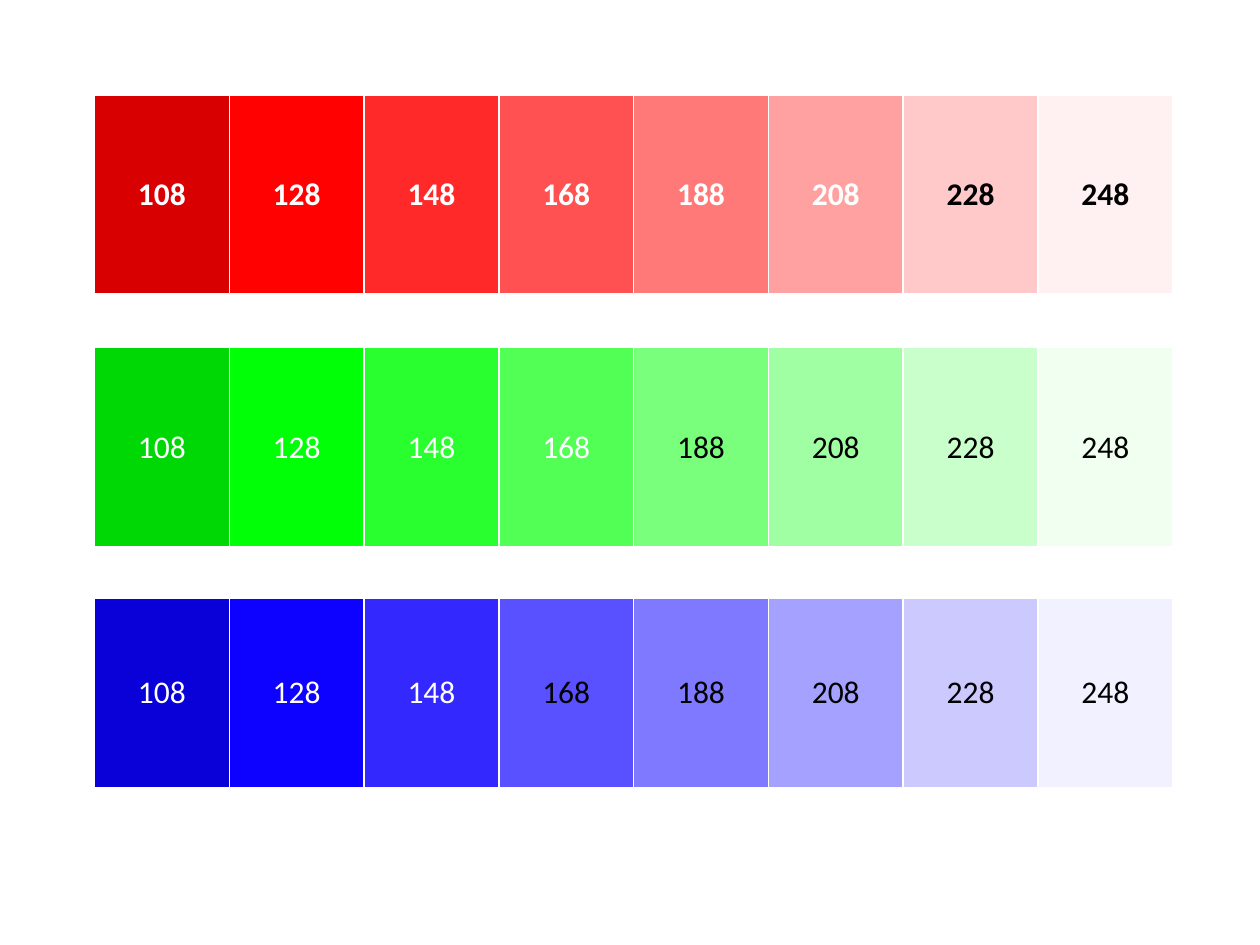
from lxml.etree import SubElement
from pptx import Presentation
from pptx.dml.color import RGBColor
from pptx.enum.text import MSO_ANCHOR, PP_ALIGN
from pptx.oxml.ns import qn
from pptx.util import Inches, Pt

WHITE = RGBColor(0xFF, 0xFF, 0xFF)
BLACK = RGBColor(0x00, 0x00, 0x00)

LEVELS = range(108, 249, 20)
ROW_HEIGHTS = [1.57, 0.43, 1.58, 0.4, 1.51]
COL_WIDTH = 1.07

# Table row: (tints from dark to light, number of white labels, bold)
SCALES = {
    0: ("D80000 FF0101 FF2929 FF5151 FF7979 FFA1A1 FFC9C9 FFF1F1", 6, True),
    2: ("00D805 01FF07 29FF2E 51FF55 79FF7C A1FFA3 C9FFCA F1FFF1", 4, False),
    4: ("0A00D8 0D01FF 3329FF 5951FF 7F79FF A5A1FF CCC9FF F2F1FF", 3, False),
}


def add_borders(cell, color):
    tcPr = cell._tc.get_or_add_tcPr()
    for side in ("a:lnL", "a:lnR", "a:lnT", "a:lnB"):
        ln = SubElement(tcPr, qn(side), w=str(Pt(1)))
        fill = SubElement(ln, qn("a:solidFill"))
        SubElement(fill, qn("a:srgbClr"), val=str(color))


prs = Presentation()
prs.slide_width, prs.slide_height = Inches(10), Inches(7.5)
s = prs.slides.add_slide(prs.slide_layouts[6])

# Table grid
table = s.shapes.add_table(
    len(ROW_HEIGHTS), len(LEVELS), Inches(0.75), Inches(0.76),
    Inches(COL_WIDTH * len(LEVELS)), Inches(sum(ROW_HEIGHTS))).table
table.first_row = False
table.horz_banding = False
for col in table.columns:
    col.width = Inches(COL_WIDTH)
for row, height in zip(table.rows, ROW_HEIGHTS):
    row.height = Inches(height)

# White borders, and no fill in the spacer rows
for cell in table.iter_cells():
    add_borders(cell, WHITE)
    cell.fill.background()

# Colour scales
for row, (tints, white_count, bold) in SCALES.items():
    for col, (level, tint) in enumerate(zip(LEVELS, tints.split())):
        cell = table.cell(row, col)
        cell.fill.solid()
        cell.fill.fore_color.rgb = RGBColor.from_string(tint)
        cell.vertical_anchor = MSO_ANCHOR.MIDDLE
        p = cell.text_frame.paragraphs[0]
        p.text = str(level)
        p.alignment = PP_ALIGN.CENTER
        font = p.runs[0].font
        font.name = "Calibri"
        font.size = Pt(18)
        font.bold = bold
        font.color.rgb = WHITE if col < white_count else BLACK

prs.save("out.pptx")
